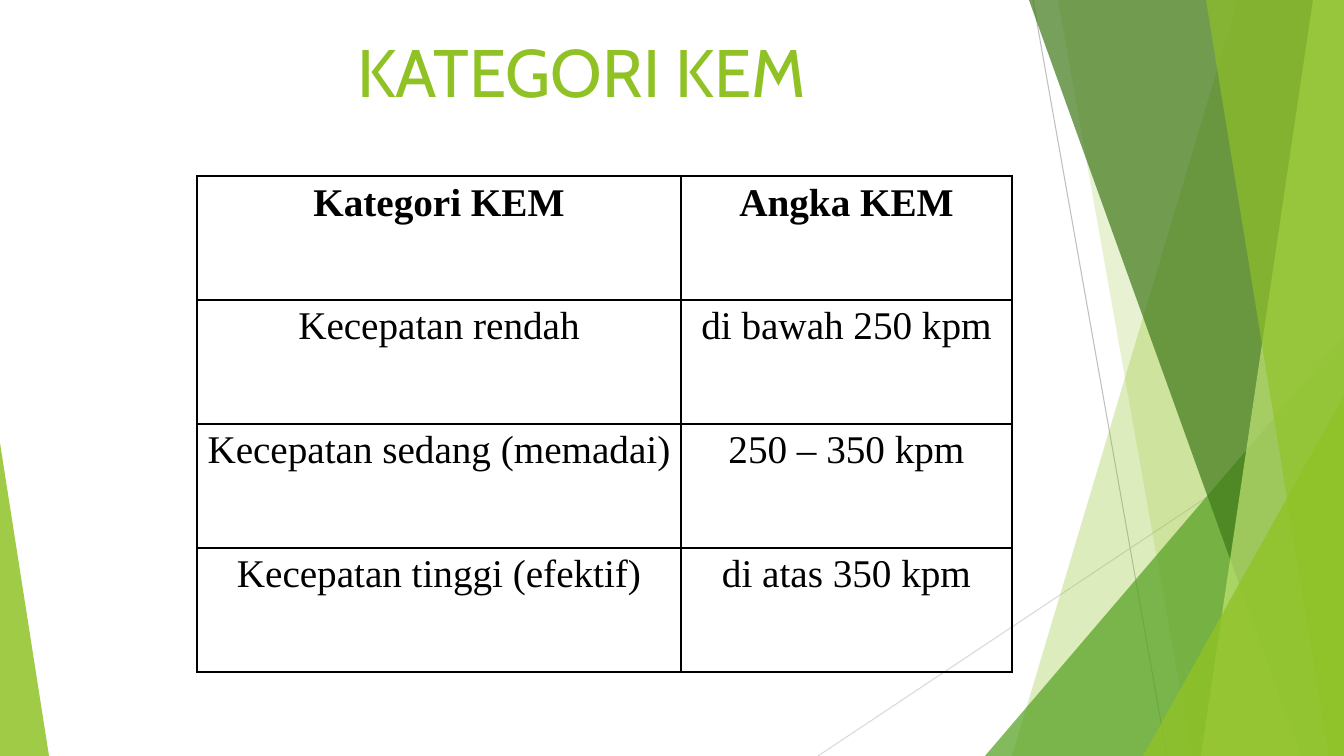
from lxml.etree import SubElement
from pptx import Presentation
from pptx.dml.color import RGBColor
from pptx.enum.shapes import MSO_CONNECTOR, MSO_SHAPE
from pptx.enum.text import MSO_ANCHOR, PP_ALIGN
from pptx.oxml.ns import qn
from pptx.util import Emu, Pt

SCALE = 914400 / 100.8
WIDE, HIGH = 1344, 756
COLORS = {
    "lime": "90C226", "green": "54A021", "dark": "3F7819", "pale": "C0E474",
    "gray": "BFBFBF", "light": "D9D9D9", "black": "000000",
}
ROWS = [
    ("Kategori KEM", "Angka KEM"),
    ("Kecepatan rendah", "di bawah 250 kpm"),
    ("Kecepatan sedang (memadai)", "250 – 350 kpm"),
    ("Kecepatan tinggi (efektif)", "di atas 350 kpm"),
]


def px(size):
    """Turn pixels into EMU."""
    return Emu(round(size * SCALE))


def paint(shape, color, alpha):
    """Give a shape a flat, partly transparent fill."""
    shape.shadow.inherit = False
    shape.line.fill.background()
    shape.fill.solid()
    shape.fill.fore_color.rgb = RGBColor.from_string(COLORS[color])
    tone = shape.fill._xPr.find(qn("a:solidFill"))[0]
    SubElement(tone, qn("a:alpha"), val=str(alpha * 1000))


def add_line(slide, start, end, color):
    """Draw a thin straight line."""
    line = slide.shapes.add_connector(
        MSO_CONNECTOR.STRAIGHT, *map(px, start + end))
    line.line.color.rgb = RGBColor.from_string(COLORS[color])
    line.line.width = Pt(0.75)
    SubElement(line._element.spPr, qn("a:effectLst"))


def add_band(slide, top, foot, color, alpha):
    """Draw a band from a slanted left edge to the right slide edge."""
    pen = slide.shapes.build_freeform(top, 0, scale=SCALE)
    pen.add_line_segments([(WIDE, 0), (WIDE, HIGH), (foot, HIGH)], close=True)
    paint(pen.convert_to_shape(), color, alpha)


def add_peak(slide, left, top, width, tip, color, alpha):
    """Draw a triangle that stands on the bottom edge."""
    peak = slide.shapes.add_shape(
        MSO_SHAPE.ISOSCELES_TRIANGLE,
        *map(px, (left, top, width, HIGH - top)))
    peak.adjustments[0] = tip
    paint(peak, color, alpha)


def set_text(frame, text, font="Times New Roman", size=28, color="black",
             bold=False, hang=0):
    """Write one centred paragraph with its format."""
    para = frame.paragraphs[0]
    para.alignment = PP_ALIGN.CENTER
    props = para._p.get_or_add_pPr()
    props.set("marL", str(px(hang)))
    props.set("indent", str(-px(hang)))
    run = para.add_run()
    run.text = text
    run.font.name = font
    run.font.size = Pt(size)
    run.font.bold = bold
    run.font.color.rgb = RGBColor.from_string(COLORS[color])


def add_edges(cell):
    """Put a black line on each side of a cell."""
    props = cell._tc.get_or_add_tcPr()
    for spot, side in enumerate(("lnL", "lnR", "lnT", "lnB")):
        edge = props.makeelement(qn(f"a:{side}"), {"w": str(Pt(1))})
        fill = SubElement(edge, qn("a:solidFill"))
        SubElement(fill, qn("a:srgbClr"), val=COLORS["black"])
        props.insert(spot, edge)


def add_grid(slide, left, top, cols, row):
    """Draw the table of reading speeds."""
    table = slide.shapes.add_table(
        len(ROWS), len(cols), px(left), px(top),
        px(sum(cols)), px(row * len(ROWS))).table
    table.first_row = table.horz_banding = False
    for col, width in zip(table.columns, cols):
        col.width = px(width)
    for i, words in enumerate(ROWS):
        table.rows[i].height = px(row)
        for j, text in enumerate(words):
            cell = table.cell(i, j)
            cell.margin_left = cell.margin_right = px(7)
            cell.fill.background()
            set_text(cell.text_frame, text, bold=i == 0, hang=38)
            add_edges(cell)


def add_decor(slide):
    """Draw the green facets and thin lines."""
    add_line(slide, (1033, 0), (1167, HIGH), "gray")
    add_line(slide, (WIDE, 406), (818, HIGH), "light")
    add_band(slide, 1238, 1012, "lime", 30)
    add_band(slide, 1058, 1192, "lime", 20)
    add_peak(slide, 985, 336, 359, 1, "green", 72)
    add_band(slide, 1029, 1301, "dark", 70)
    add_band(slide, 1313, 1201, "pale", 70)
    add_band(slide, 1206, 1329, "lime", 65)
    add_peak(slide, 1143, 396, 201, 1, "lime", 80)
    add_peak(slide, 0, 443, 49, 0, "lime", 85)


def add_title(slide, text):
    """Place and fill the title."""
    title = slide.shapes.title
    title.left, title.top, title.width, title.height = map(
        px, (32, 25, 1099, 126))
    title.text_frame.vertical_anchor = MSO_ANCHOR.TOP
    set_text(title.text_frame, text, font="Cabin", size=48, color="lime")


def main():
    """Build and save the slide."""
    deck = Presentation()
    deck.slide_width, deck.slide_height = px(WIDE), px(HIGH)
    slide = deck.slides.add_slide(deck.slide_layouts[5])
    add_decor(slide)
    add_title(slide, "KATEGORI KEM")
    add_grid(slide, 197, 176, (484, 331), 124)
    deck.save("out.pptx")


if __name__ == "__main__":
    main()
